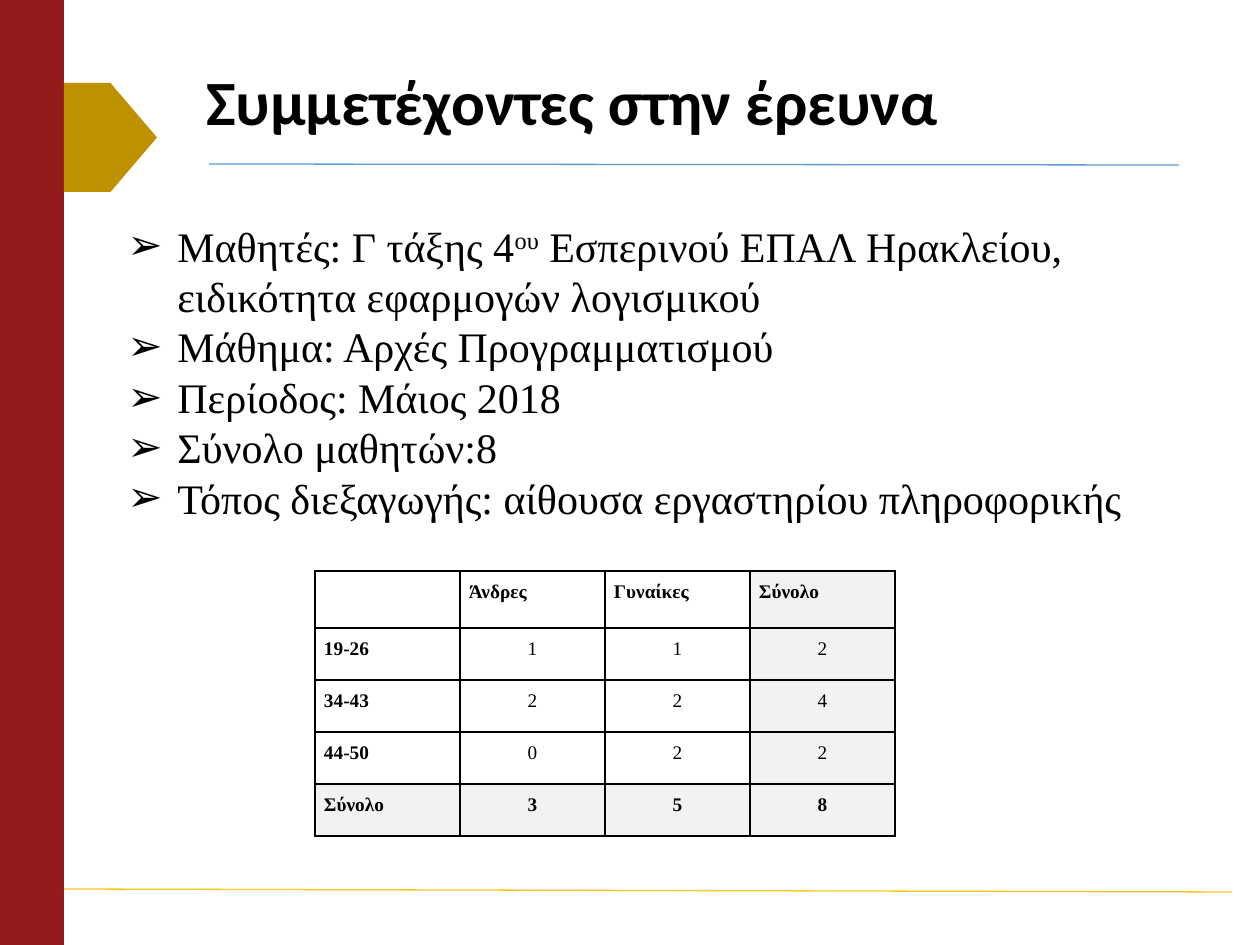
from typing import NamedTuple

from lxml.etree import SubElement
from pptx import Presentation
from pptx.dml.color import RGBColor
from pptx.enum.shapes import MSO_CONNECTOR, MSO_SHAPE
from pptx.enum.text import MSO_ANCHOR, PP_ALIGN
from pptx.oxml import parse_xml
from pptx.oxml.ns import nsdecls, qn
from pptx.util import Pt

EMU_PER_PX = 914400 / 126
BLACK = RGBColor(0x00, 0x00, 0x00)
WHITE = RGBColor(0xFF, 0xFF, 0xFF)
RED = RGBColor(0x93, 0x1B, 0x1B)
GOLD = RGBColor(0xBF, 0x90, 0x00)
BLUE = RGBColor(0x5B, 0x9B, 0xD5)
YELLOW = RGBColor(0xFF, 0xC6, 0x1A)
LIGHT_GRAY = RGBColor(0xF2, 0xF2, 0xF2)
SERIF = "Times New Roman"


class Box(NamedTuple):
    left: int
    top: int
    width: int
    height: int


class Block(NamedTuple):
    kind: MSO_SHAPE
    box: Box
    color: RGBColor


class Rule(NamedTuple):
    start: tuple[int, int]
    end: tuple[int, int]
    color: RGBColor


class Run(NamedTuple):
    text: str
    superscript: bool = False


BLOCKS = [
    Block(MSO_SHAPE.RECTANGLE, Box(0, 0, 64, 945), RED),
    Block(MSO_SHAPE.PENTAGON, Box(64, 83, 93, 109), GOLD),
]
RULES = [
    Rule((209, 164), (1179, 165), BLUE),
    Rule((64, 889), (1232, 892), YELLOW),
]
FACTS = [
    [Run("Μαθητές: Γ τάξης 4"), Run("ου", superscript=True),
     Run(" Εσπερινού ΕΠΑΛ Ηρακλείου, ειδικότητα εφαρμογών λογισμικού")],
    [Run("Μάθημα: Αρχές Προγραμματισμού")],
    [Run("Περίοδος: Μάιος 2018")],
    [Run("Σύνολο μαθητών:8")],
    [Run("Τόπος διεξαγωγής: αίθουσα εργαστηρίου πληροφορικής")],
]
PARTICIPANTS = [
    ["", "Άνδρες", "Γυναίκες", "Σύνολο"],
    ["19-26", "1", "1", "2"],
    ["34-43", "2", "2", "4"],
    ["44-50", "0", "2", "2"],
    ["Σύνολο", "3", "5", "8"],
]
TABLE_BOX = Box(315, 571, 580, 265)
HEADER_HEIGHT = 57
ROW_HEIGHT = 52


def px(value: int) -> int:
    return round(value * EMU_PER_PX)


def emu(box: Box) -> list[int]:
    return [px(value) for value in box]


def write_text(frame, paragraphs: list[list[Run]], *, size: int, font: str = SERIF,
               bold: bool = False, align=PP_ALIGN.LEFT, spacing: float = 1.0,
               bullet: str = "", indent: int = 0) -> None:
    frame.word_wrap = True
    for index, runs in enumerate(paragraphs):
        paragraph = frame.add_paragraph() if index else frame.paragraphs[0]
        paragraph.alignment = align
        paragraph.line_spacing = spacing
        paragraph.font.size = Pt(size)
        if bullet:
            properties = paragraph._p.get_or_add_pPr()
            properties.set("marL", str(px(indent)))
            properties.set("indent", str(-px(indent)))
            SubElement(properties, qn("a:buFont"), typeface="Arial")
            SubElement(properties, qn("a:buChar"), char=bullet)
            properties.append(properties.find(qn("a:defRPr")))
        for item in runs:
            run = paragraph.add_run()
            run.text = item.text
            run.font.name = font
            run.font.size = Pt(size)
            run.font.bold = bold
            run.font.color.rgb = BLACK
            if item.superscript:
                run.font._element.set("baseline", "30000")


def add_text(slide, box: Box, paragraphs: list[list[Run]], anchor=MSO_ANCHOR.TOP,
             **text_format) -> None:
    frame = slide.shapes.add_textbox(*emu(box)).text_frame
    frame.vertical_anchor = anchor
    write_text(frame, paragraphs, **text_format)


def add_block(slide, block: Block) -> None:
    shape = slide.shapes.add_shape(block.kind, *emu(block.box))
    shape.shadow.inherit = False
    shape.fill.solid()
    shape.fill.fore_color.rgb = block.color
    shape.line.fill.background()


def add_rule(slide, rule: Rule) -> None:
    ends = [px(value) for value in rule.start + rule.end]
    connector = slide.shapes.add_connector(MSO_CONNECTOR.STRAIGHT, *ends)
    connector.line.color.rgb = rule.color
    connector.line.width = Pt(0.75)
    SubElement(connector._element.spPr, qn("a:effectLst"))


def add_borders(cell) -> None:
    properties = cell._tc.get_or_add_tcPr()
    for position, side in enumerate("LRTB"):
        properties.insert(position, parse_xml(
            f'<a:ln{side} {nsdecls("a")} w="{Pt(1)}"><a:solidFill>'
            f'<a:srgbClr val="{BLACK}"/></a:solidFill></a:ln{side}>'))


def add_participants(slide) -> None:
    last_row, last_column = len(PARTICIPANTS) - 1, len(PARTICIPANTS[0]) - 1
    table = slide.shapes.add_table(last_row + 1, last_column + 1, *emu(TABLE_BOX)).table
    table.horz_banding = False
    for column in table.columns:
        column.width = px(TABLE_BOX.width // (last_column + 1))
    for row_index, values in enumerate(PARTICIPANTS):
        table.rows[row_index].height = px(ROW_HEIGHT if row_index else HEADER_HEIGHT)
        for column_index, value in enumerate(values):
            cell = table.cell(row_index, column_index)
            is_label = row_index == 0 or column_index == 0
            is_total = row_index == last_row or column_index == last_column
            cell.margin_left = cell.margin_right = px(9)
            cell.margin_top = cell.margin_bottom = 0
            cell.fill.solid()
            cell.fill.fore_color.rgb = LIGHT_GRAY if is_total else WHITE
            add_borders(cell)
            write_text(cell.text_frame, [[Run(value)] if value else []], size=11,
                       bold=is_label or row_index == last_row, spacing=1.5,
                       align=PP_ALIGN.JUSTIFY if is_label else PP_ALIGN.CENTER)


def main() -> None:
    presentation = Presentation()
    presentation.slide_width = px(1260)
    presentation.slide_height = px(945)
    slide = presentation.slides.add_slide(presentation.slide_layouts[6])
    for block in BLOCKS:
        add_block(slide, block)
    for rule in RULES:
        add_rule(slide, rule)
    add_text(slide, Box(194, 52, 992, 106), [[Run("Συμμετέχοντες στην έρευνα")]],
             anchor=MSO_ANCHOR.MIDDLE, size=36, font="Calibri", bold=True, spacing=0.9)
    add_participants(slide)
    add_text(slide, Box(115, 214, 1028, 318), FACTS, size=24, bullet="➢", indent=50)
    presentation.save("out.pptx")


if __name__ == "__main__":
    main()
